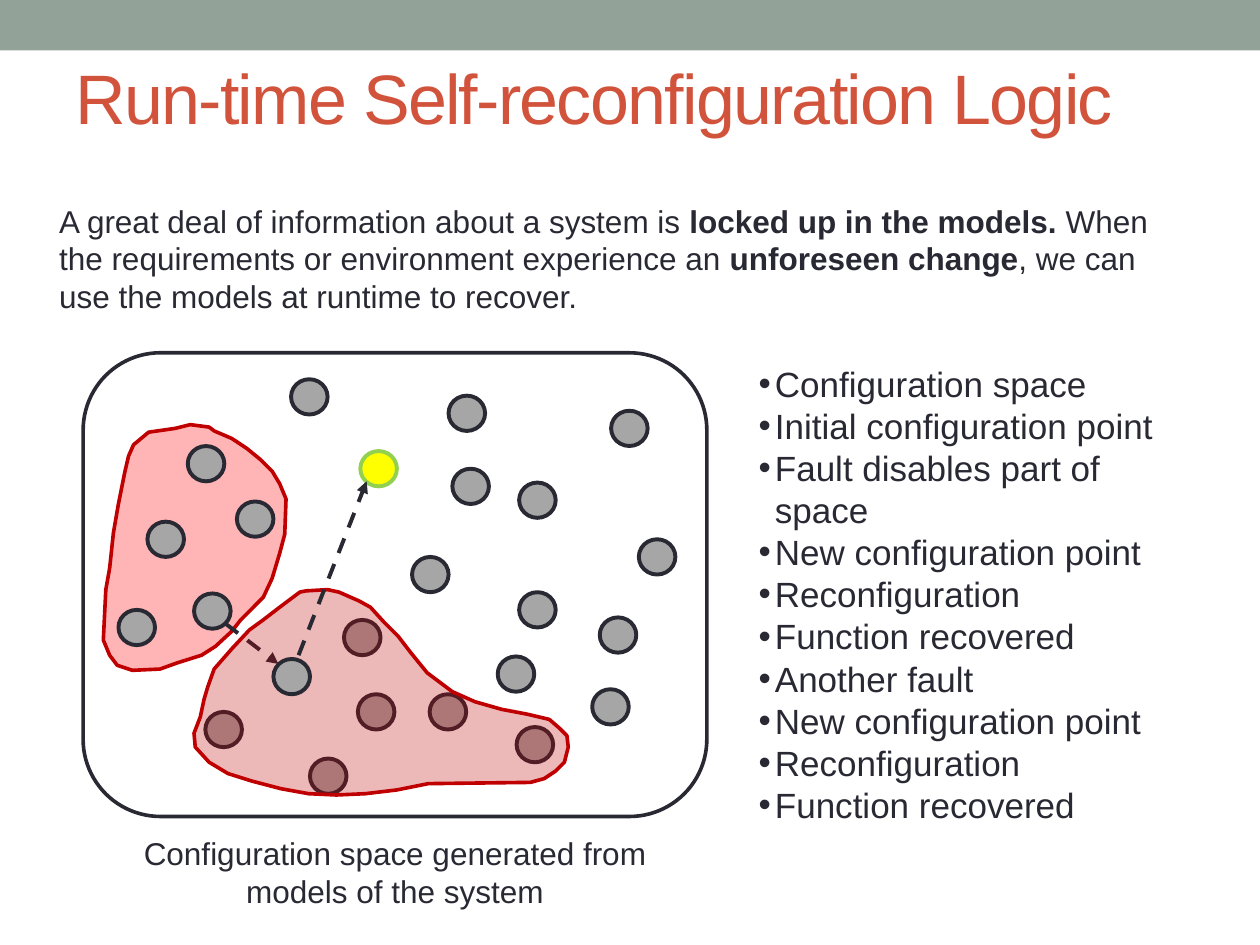
from pptx import Presentation, util as u
from pptx.dml.color import RGBColor
from pptx.enum import dml, shapes, text
from pptx.oxml.ns import qn
from lxml import etree

COLORS = {"band": "93A299", "title": "D2533C", "ink": "292934", "point": "A6A6A6",
          "new": "FFFF00", "new_edge": "92D050", "fault": "FF0000", "fault_edge": "C00000"}
rgb = {name: RGBColor.from_string(value) for name, value in COLORS.items()}

# Grid of 1000 columns by 750 rows on a 10 x 7.5 inch slide
UNIT = u.Inches(0.01)
prs = Presentation()
prs.slide_width, prs.slide_height = 1000 * UNIT, 750 * UNIT
s = prs.slides.add_slide(prs.slide_layouts[1])


def style(sp, fill, line, width=2.25, alpha=None):
    sp.shadow.inherit = False
    if fill:
        sp.fill.solid()
        sp.fill.fore_color.rgb = rgb[fill]
    else:
        sp.fill.background()
    if alpha:
        color = sp.fill._xPr.find(qn("a:solidFill"))[0]
        etree.SubElement(color, qn("a:alpha"), val=str(alpha * 1000))
    if line:
        sp.line.color.rgb = rgb[line]
        sp.line.width = u.Pt(width)
    else:
        sp.line.fill.background()


def place(sp, *box):
    sp.left, sp.top, sp.width, sp.height = [v * UNIT for v in box]
    tf = sp.text_frame
    tf.word_wrap = True
    tf.auto_size = text.MSO_AUTO_SIZE.NONE
    tf.vertical_anchor = text.MSO_ANCHOR.TOP
    return tf


# Top band
band = s.shapes.add_shape(shapes.MSO_SHAPE.RECTANGLE, 0, 0, 1000 * UNIT, 40 * UNIT)
style(band, "band", None)

# Title
tf = place(s.shapes.title, 50, 23, 900, 107)
tf.vertical_anchor = text.MSO_ANCHOR.MIDDLE
p = tf.paragraphs[0]
p.alignment = text.PP_ALIGN.LEFT
r = p.add_run()
r.text = "Run-time Self-reconfiguration Logic"
r.font.size, r.font.name, r.font.color.rgb = u.Pt(40), "Arial", rgb["title"]
r.font._element.set("spc", "-100")

# Space, fault regions, configuration points and moves, from back to front
first_fault = [
    (170, 342), (184, 348), (196, 356), (207, 365), (216, 374), (222, 384), (227, 396),
    (226, 424), (222, 439), (216, 459), (209, 474), (200, 483), (191, 492), (184, 501),
    (171, 513), (160, 520), (141, 526), (127, 531), (105, 532), (93, 528), (87, 520),
    (82, 508), (84, 468), (87, 451), (90, 423), (94, 400), (99, 375), (102, 362),
    (106, 353), (118, 343), (139, 340), (151, 337), (166, 339)]
second_fault = [
    (238, 470), (222, 482), (209, 492), (198, 500), (184, 515), (170, 531), (165, 545),
    (162, 555), (159, 569), (154, 582), (155, 593), (166, 605), (181, 614), (200, 620),
    (223, 626), (245, 630), (267, 631), (290, 630), (315, 627), (340, 622), (421, 621),
    (432, 618), (441, 612), (448, 605), (451, 593), (450, 584), (444, 578), (436, 571),
    (419, 567), (398, 563), (377, 557), (359, 549), (339, 534), (326, 518), (316, 505),
    (304, 493), (294, 482), (285, 477), (269, 470), (260, 468), (243, 469)]
points = [
    (327, 442), (149, 354), (188, 398), (412, 383), (341, 551), (273, 492), (412, 470),
    (163, 565), (284, 551), (117, 414), (94, 484), (246, 602), (410, 577), (395, 521),
    (356, 314), (359, 372), (507, 428), (476, 490), (470, 547), (485, 326), (231, 301)]
space = [("space", (66, 280, 495, 368))]
parts = ([("fault", first_fault, "fault", 29)]
         + [("point", xy, "point", "ink") for xy in points]
         + space
         + [("move", (179, 495, 221, 527)), ("point", (154, 471), "point", "ink"),
            ("fault", second_fault, "fault_edge", 28),
            ("point", (286, 358), "new", "new_edge"), ("point", (217, 523), "point", "ink"),
            ("move", (237, 520, 291, 382))])
for kind, where, *look in parts:
    if kind == "fault":
        outline = s.shapes.build_freeform(*where[0], scale=UNIT)
        outline.add_line_segments(where[1:], close=True)
        style(outline.convert_to_shape(), look[0], "fault_edge", 2.08, look[1])
    elif kind == "move":
        line = s.shapes.add_connector(shapes.MSO_CONNECTOR.STRAIGHT, *[v * UNIT for v in where])
        line.line.color.rgb = rgb["ink"]
        line.line.width = u.Pt(2.25)
        line.line.dash_style = dml.MSO_LINE.DASH
        etree.SubElement(line.line._get_or_add_ln(), qn("a:tailEnd"), type="triangle")
        etree.SubElement(line._element.spPr, qn("a:effectLst"))
    else:
        preset, size = ((shapes.MSO_SHAPE.OVAL, (29, 28)) if kind == "point"
                        else (shapes.MSO_SHAPE.ROUNDED_RECTANGLE, ()))
        sp = s.shapes.add_shape(preset, *[v * UNIT for v in where + size])
        style(sp, *(look or (None, "ink", 2.08)))

# Steps list
steps = ["Configuration space", "Initial configuration point", "Fault disables part of space",
         "New configuration point", "Reconfiguration", "Function recovered", "Another fault",
         "New configuration point", "Reconfiguration", "Function recovered"]
tf = place(s.placeholders[1], 592, 283, 373, 347)
for i, step in enumerate(steps):
    p = tf.paragraphs[0] if i == 0 else tf.add_paragraph()
    p.text = step
    p.space_before = u.Pt(0)
    p.font.size, p.font.name, p.font.color.rgb = u.Pt(20), "Arial", rgb["ink"]
    pPr = p._p.get_or_add_pPr()
    pPr.set("marL", str(13 * UNIT))
    pPr.set("indent", str(-13 * UNIT))
    bullet = etree.Element(qn("a:buChar"), char="•")
    pPr.insert_element_before(bullet, "a:tabLst", "a:defRPr", "a:extLst")

# Introduction and caption, as (text, bold) runs
intro = [("A great deal of information about a system is ", False),
         ("locked up in the models. ", True),
         ("When the requirements or environment experience an ", False),
         ("unforeseen change", True),
         (", we can use the models at runtime to recover.", False)]
caption = [("Configuration space generated from models of the system", False)]
for box, runs, align in [((37, 155, 912, 101), intro, text.PP_ALIGN.LEFT),
                         ((66, 657, 495, 71), caption, text.PP_ALIGN.CENTER)]:
    tf = place(s.shapes.add_textbox(0, 0, 0, 0), *box)
    p = tf.paragraphs[0]
    p.alignment = align
    p.font.size, p.font.name, p.font.color.rgb = u.Pt(18), "Arial", rgb["ink"]
    for words, bold in runs:
        r = p.add_run()
        r.text, r.font.bold = words, bold

prs.save("out.pptx")
